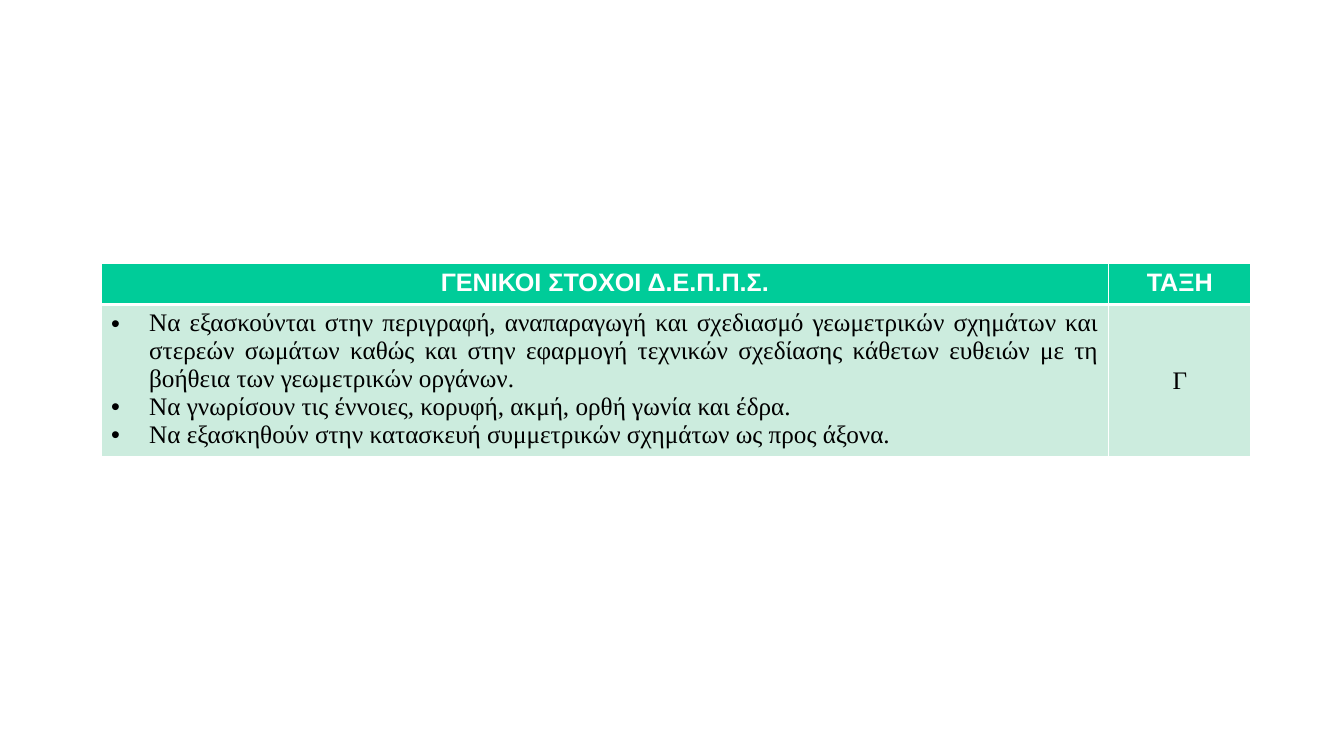
from lxml.etree import SubElement
from pptx import Presentation
from pptx.dml.color import RGBColor
from pptx.enum.text import MSO_ANCHOR, PP_ALIGN
from pptx.oxml.ns import qn
from pptx.util import Pt

PX = 9080
WHITE = RGBColor(0xFF, 0xFF, 0xFF)
BLACK = RGBColor(0x00, 0x00, 0x00)
GREEN = RGBColor(0x00, 0xCC, 0x99)
MINT = RGBColor(0xCC, 0xEC, 0xDE)

HEADER = {"size": Pt(18), "name": "Arial", "bold": True}
BODY = {"size": Pt(18), "name": "Times New Roman", "bold": False}

HEADINGS = ["ΓΕΝΙΚΟΙ ΣΤΟΧΟΙ Δ.Ε.Π.Π.Σ.", "ΤΑΞΗ"]
GOALS = [
    "Να εξασκούνται στην περιγραφή, αναπαραγωγή και σχεδιασμό γεωμετρικών σχημάτων και "
    "στερεών σωμάτων καθώς και στην εφαρμογή τεχνικών σχεδίασης κάθετων ευθειών με τη "
    "βοήθεια των γεωμετρικών οργάνων.",
    "Να γνωρίσουν τις έννοιες, κορυφή, ακμή, ορθή γωνία και έδρα.",
    "Να εξασκηθούν στην κατασκευή συμμετρικών σχημάτων ως προς άξονα.",
]
GRADE = "Γ"


def px(n):
    return round(n * PX)


def set_borders(cell, widths):
    tcPr = cell._tc.get_or_add_tcPr()
    for side, width in zip("LRTB", widths):
        ln = SubElement(tcPr, qn(f"a:ln{side}"), w=str(Pt(width)))
        fill = SubElement(ln, qn("a:solidFill"))
        SubElement(fill, qn("a:srgbClr"), val=str(WHITE))


def add_bullet(p, indent):
    pPr = p._p.get_or_add_pPr()
    pPr.set("marL", str(indent))
    pPr.set("indent", str(-indent))
    SubElement(pPr, qn("a:buFont"), typeface="Arial")
    SubElement(pPr, qn("a:buChar"), char="•")


def fill_cell(cell, lines, font, color, fill, widths, bullets=False):
    set_borders(cell, widths)
    cell.fill.solid()
    cell.fill.fore_color.rgb = fill
    tf = cell.text_frame
    for i, line in enumerate(lines):
        p = tf.add_paragraph() if i else tf.paragraphs[0]
        p.alignment = PP_ALIGN.JUSTIFY if bullets else PP_ALIGN.CENTER
        if bullets:
            add_bullet(p, px(38))
        r = p.add_run()
        r.text = line
        for key, value in font.items():
            setattr(r.font, key, value)
        r.font.color.rgb = color


def add_goals_table(s, left, top, width, height):
    grade_width, header_height = 142, 41
    table = s.shapes.add_table(2, 2, px(left), px(top), px(width), px(height)).table
    for col, w in zip(table.columns, (width - grade_width, grade_width)):
        col.width = px(w)
    for row, h in zip(table.rows, (header_height, height - header_height)):
        row.height = px(h)
    for c, heading in enumerate(HEADINGS):
        fill_cell(table.cell(0, c), [heading], HEADER, WHITE, GREEN, (1, 1, 1, 3))
    fill_cell(table.cell(1, 0), GOALS, BODY, BLACK, MINT, (1, 1, 3, 1), bullets=True)
    grade = table.cell(1, 1)
    fill_cell(grade, [GRADE], BODY, BLACK, MINT, (1, 1, 3, 1))
    grade.vertical_anchor = MSO_ANCHOR.MIDDLE


def main():
    prs = Presentation()
    prs.slide_width, prs.slide_height = px(1343), px(755)
    s = prs.slides.add_slide(prs.slide_layouts[6])
    add_goals_table(s, 101, 263, 1149, 193)
    prs.save("out.pptx")


if __name__ == "__main__":
    main()
